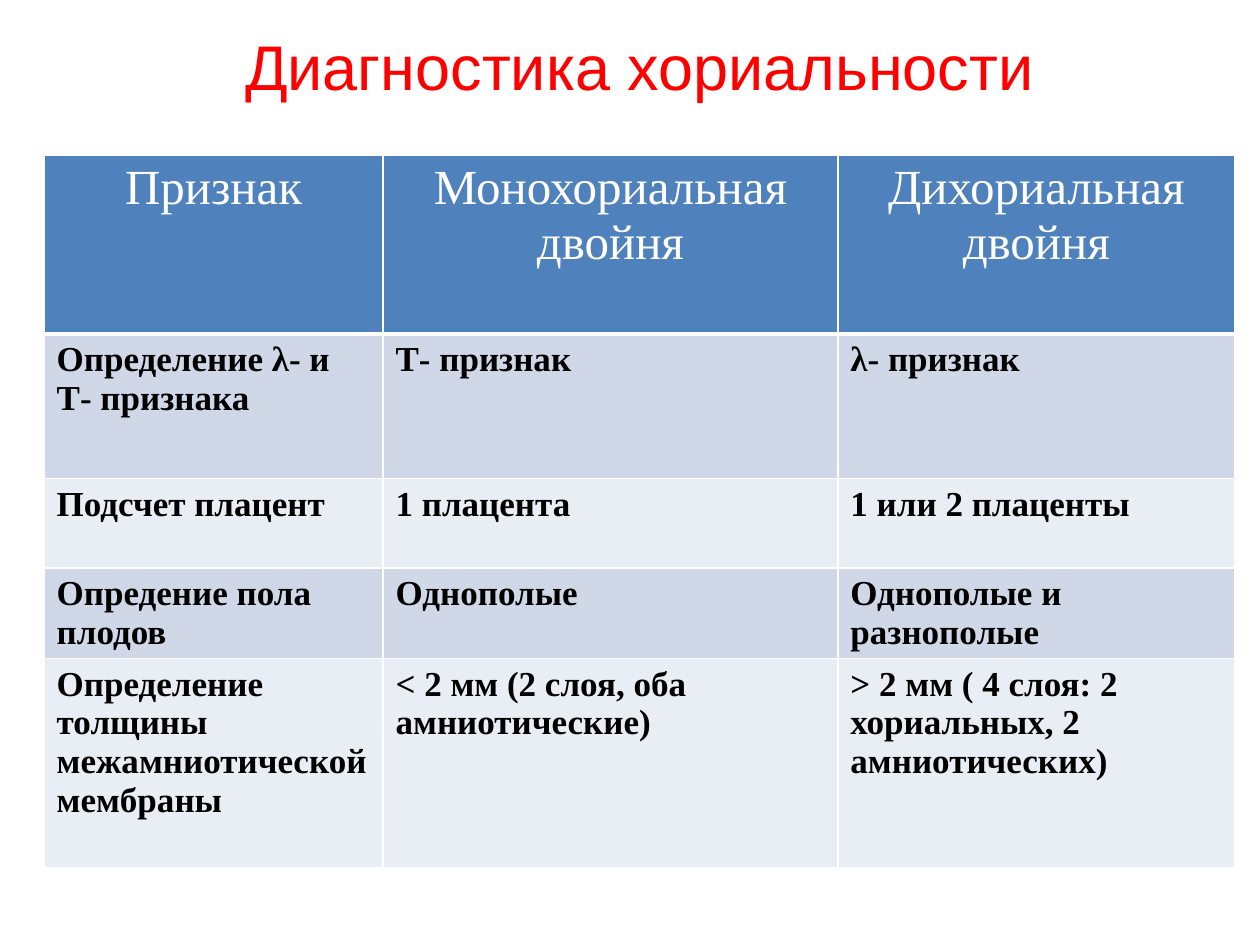
from lxml.etree import SubElement
from pptx import Presentation
from pptx.dml.color import RGBColor
from pptx.enum.text import PP_ALIGN
from pptx.oxml.ns import qn
from pptx.util import Inches, Pt

WHITE = RGBColor(0xFF, 0xFF, 0xFF)
BLACK = RGBColor(0x00, 0x00, 0x00)
RED = RGBColor(0xFF, 0x00, 0x00)
BLUE = RGBColor(0x4F, 0x81, 0xBD)
BAND = RGBColor(0xD0, 0xD8, 0xE8)
PALE = RGBColor(0xE9, 0xED, 0xF4)

LEFT, WIDTH = 0.35, 9.45
COLUMNS = [2.69, 3.61, 3.15]
HEIGHTS = [1.42, 1.15, 0.71, 0.71, 1.66]
ROWS = [
    ["Признак", "Монохориальная двойня", "Дихориальная двойня"],
    ["Определение λ- и Т- признака", "Т- признак", "λ- признак"],
    ["Подсчет плацент", "1 плацента", "1 или 2 плаценты"],
    ["Опредение пола плодов", "Однополые", "Однополые и разнополые"],
    ["Определение толщины межамниотической мембраны",
     "˂ 2 мм (2 слоя, оба амниотические)",
     "> 2 мм ( 4 слоя: 2 хориальных, 2 амниотических)"],
]


class Deck:
    title_font = "Arial"
    table_font = "Times New Roman"

    def __init__(self, prs):
        self.s = prs.slides.add_slide(prs.slide_layouts[6])

    def set_text(self, tf, text, name, size, color, bold=False, align=PP_ALIGN.LEFT):
        tf.word_wrap = True
        p = tf.paragraphs[0]
        p.text = text
        p.alignment = align
        font = p.font
        font.name, font.size, font.bold = name, Pt(size), bold
        font.color.rgb = color

    def title(self, text, top, height):
        box = self.s.shapes.add_textbox(
            Inches(LEFT), Inches(top), Inches(WIDTH), Inches(height))
        self.set_text(box.text_frame, text, self.title_font, 36, RED,
                      align=PP_ALIGN.CENTER)

    def borders(self, cell, bottom):
        tcPr = cell._tc.get_or_add_tcPr()
        widths = {"a:lnL": 1, "a:lnR": 1, "a:lnT": 1, "a:lnB": bottom}
        for tag, width in widths.items():
            ln = SubElement(tcPr, qn(tag), w=str(Pt(width)))
            fill = SubElement(ln, qn("a:solidFill"))
            SubElement(fill, qn("a:srgbClr"), val=str(WHITE))

    def table(self, rows, top):
        table = self.s.shapes.add_table(
            len(rows), len(COLUMNS), Inches(LEFT), Inches(top),
            Inches(WIDTH), Inches(sum(HEIGHTS))).table
        for column, width in zip(table.columns, COLUMNS):
            column.width = Inches(width)
        for row, height in zip(table.rows, HEIGHTS):
            row.height = Inches(height)
        for i, texts in enumerate(rows):
            for j, text in enumerate(texts):
                cell = table.cell(i, j)
                self.borders(cell, bottom=3 if i == 0 else 1)
                cell.fill.solid()
                if i == 0:
                    cell.fill.fore_color.rgb = BLUE
                    self.set_text(cell.text_frame, text, self.table_font, 28, WHITE,
                                  align=PP_ALIGN.CENTER)
                else:
                    cell.fill.fore_color.rgb = BAND if i % 2 else PALE
                    self.set_text(cell.text_frame, text, self.table_font, 20, BLACK,
                                  bold=True)


def main():
    prs = Presentation()
    prs.slide_width, prs.slide_height = Inches(10), Inches(7.5)
    deck = Deck(prs)
    deck.table(ROWS, top=1.23)
    deck.title("Диагностика хориальности", top=0.17, height=0.71)
    prs.save("out.pptx")


if __name__ == "__main__":
    main()
